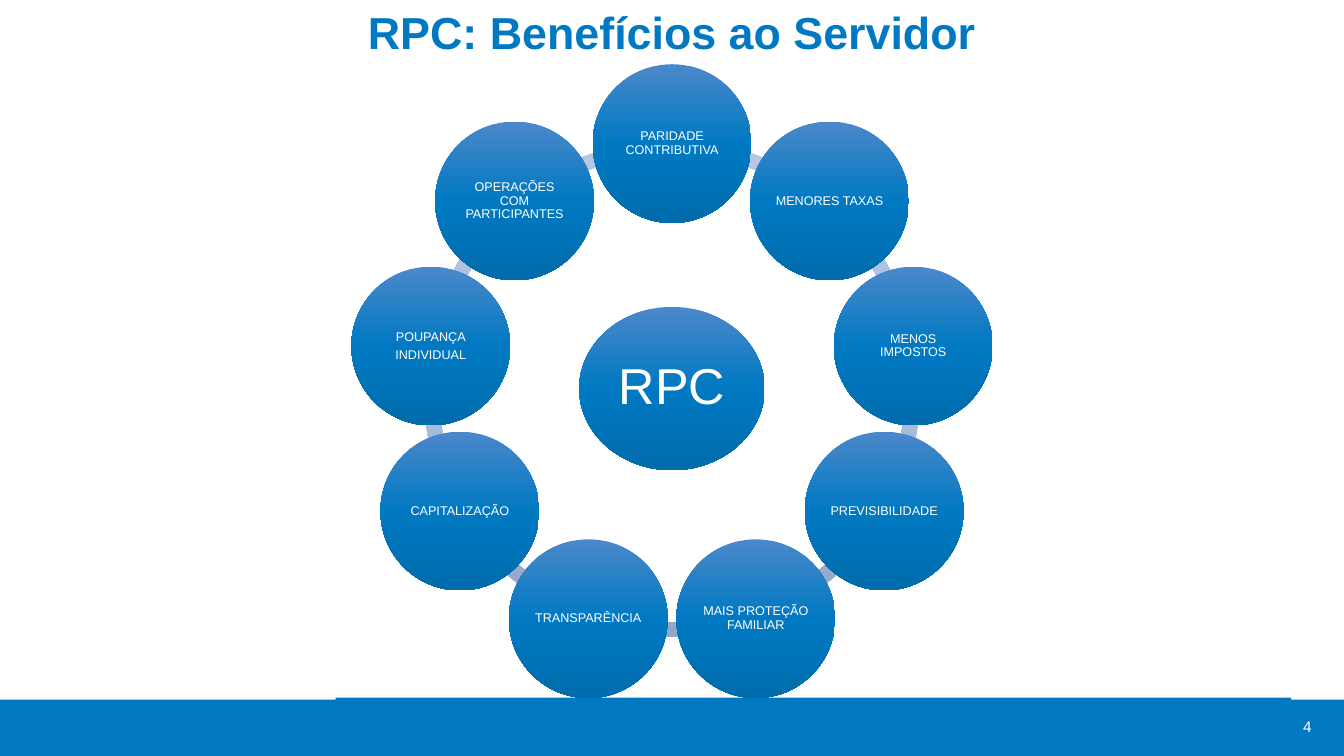
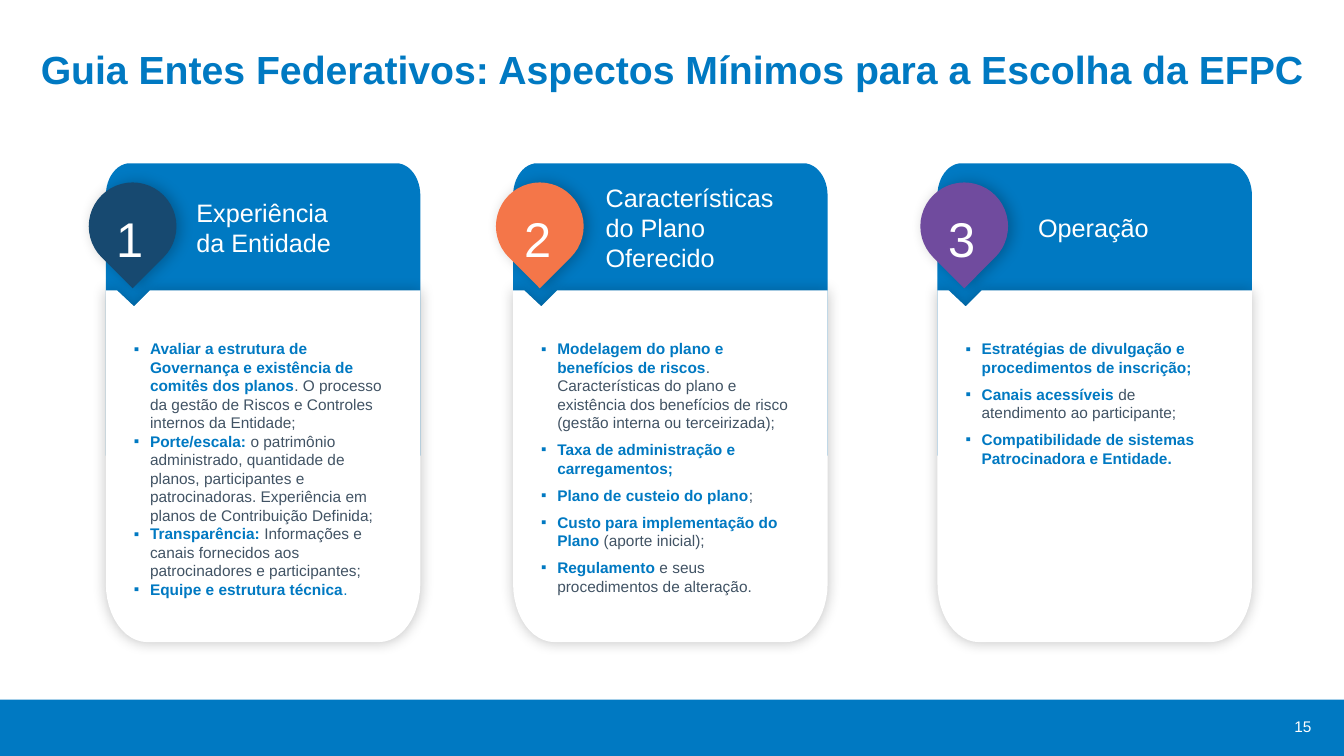
import copy
import math

import pptx
import pptx.dml.color
import pptx.enum.shapes
import pptx.enum.text
import pptx.oxml.ns
import pptx.util
from lxml import etree

RGBColor = pptx.dml.color.RGBColor
Shape = pptx.enum.shapes.MSO_SHAPE
Align = pptx.enum.text.PP_ALIGN
Anchor = pptx.enum.text.MSO_ANCHOR
qn = pptx.oxml.ns.qn

BLUE = RGBColor(0x00, 0x79, 0xC2)
WHITE = RGBColor(0xFF, 0xFF, 0xFF)
SLATE = RGBColor(0x41, 0x53, 0x64)
NAVY = RGBColor(0x17, 0x49, 0x70)
ORANGE = RGBColor(0xF4, 0x76, 0x49)
PURPLE = RGBColor(0x70, 0x4B, 0x9E)
CIRCLE_GRADIENT = (RGBColor(0x4B, 0x88, 0xCA), BLUE, RGBColor(0x00, 0x6C, 0xAC))
LINK_GRADIENT = (RGBColor(0xB6, 0xC6, 0xE2), RGBColor(0xA9, 0xBD, 0xE0),
                 RGBColor(0x93, 0xA7, 0xCA))

FONT = "Arial"
CELL = pptx.util.Inches(0.1)
COLUMNS, ROWS = 133.33, 75
BAND_TOP = 69.4
TITLE_FORMAT = {"alignment": Align.CENTER, "line_spacing": 0.9}
CIRCLE_FORMAT = {"alignment": Align.CENTER, "line_spacing": 0.9}

BENEFITS = (
    "PARIDADE CONTRIBUTIVA",
    "MENORES TAXAS",
    "MENOS IMPOSTOS",
    "PREVISIBILIDADE",
    "MAIS PROTEÇÃO FAMILIAR",
    "TRANSPARÊNCIA",
    "CAPITALIZAÇÃO",
    "POUPANÇA\nINDIVIDUAL",
    "OPERAÇÕES COM PARTICIPANTES",
)

# Each item holds its bold part, its plain part and, if not slate, the plain colour.
CARDS = (
    {"left": 10.5, "color": NAVY, "heading": "Experiência da Entidade",
     "heading_offset": 8, "heading_width": 17.9, "gap": 0,
     "items": (
         ("Avaliar a estrutura de Governança e existência de comitês dos planos",
          ". O processo da gestão de Riscos e Controles internos da Entidade;"),
         ("Porte/escala: ",
          "o patrimônio administrado, quantidade de planos, participantes e "
          "patrocinadoras. Experiência em planos de Contribuição Definida;"),
         ("Transparência: ",
          "Informações e canais fornecidos aos patrocinadores e participantes;"),
         ("Equipe e estrutura técnica", ".", BLUE),
     )},
    {"left": 50.9, "color": ORANGE, "heading": "Características\ndo Plano Oferecido",
     "heading_offset": 8.2, "heading_width": 21.7, "gap": 6,
     "items": (
         ("Modelagem do plano e benefícios de riscos",
          ". Características do plano e existência dos benefícios de risco "
          "(gestão interna ou terceirizada);"),
         ("Taxa de administração e carregamentos;",),
         ("Plano de custeio do plano", ";"),
         ("Custo para implementação do Plano ", "(aporte inicial);"),
         ("Regulamento", " e seus procedimentos de alteração."),
     )},
    {"left": 93, "color": PURPLE, "heading": "Operação",
     "heading_offset": 9, "heading_width": 15, "gap": 6,
     "items": (
         ("Estratégias de divulgação e procedimentos de inscrição;",),
         ("Canais acessíveis ", "de atendimento ao participante;"),
         ("Compatibilidade de sistemas Patrocinadora e Entidade.",),
     )},
)


def grid(*cells):
    """Turn counts of grid columns or rows into lengths."""
    return [round(cell * CELL) for cell in cells]


def set_values(target, values):
    for name, value in values.items():
        setattr(target, name, value)


def format_font(font, size, color, bold=False):
    set_values(font, {"name": FONT, "size": pptx.util.Pt(size), "bold": bold})
    font.color.rgb = color


def write(frame, text, size, color, bold=False, paragraph_format=None):
    """Fill a text frame, one paragraph for each line of text."""
    frame.text = text
    for paragraph in frame.paragraphs:
        set_values(paragraph, paragraph_format or {})
        for run in paragraph.runs:
            format_font(run.font, size, color, bold)


def add_text_box(slide, box, anchor=Anchor.TOP, wrap=True):
    frame = slide.shapes.add_textbox(*grid(*box)).text_frame
    set_values(frame, {"word_wrap": wrap, "vertical_anchor": anchor})
    return frame


def finish(shape, color=None):
    """Remove the default outline and shadow; give a plain fill if there is one."""
    shape.line.fill.background()
    shape.shadow.inherit = False
    if color is not None:
        shape.fill.solid()
        shape.fill.fore_color.rgb = color
    return shape


def add_shape(slide, kind, box, color=None):
    return finish(slide.shapes.add_shape(kind, *grid(*box)), color)


def add_outline(slide, points, color):
    corners = [grid(*point) for point in points]
    builder = slide.shapes.build_freeform(*corners[0], scale=1.0)
    builder.add_line_segments(corners[1:], close=True)
    return finish(builder.convert_to_shape(), color)


def fill_gradient(shape, colors):
    """Fill from top to bottom with three evenly spaced colours."""
    shape.fill.gradient()
    shape.fill.gradient_angle = 270
    stop_list = shape._element.spPr.find(".//" + qn("a:gsLst"))
    stop_list.append(copy.deepcopy(stop_list[0]))
    for index, (stop, color) in enumerate(zip(shape.fill.gradient_stops, colors)):
        stop.color.rgb = color
        stop.position = index / 2


def cast_shadow(shape, distance=0):
    effects = shape._element.spPr.find(qn("a:effectLst"))
    shadow = etree.SubElement(
        effects, qn("a:outerShdw"), blurRad=str(pptx.util.Pt(10)),
        dist=str(pptx.util.Pt(distance)), dir="0", algn="ctr", rotWithShape="0")
    color = etree.SubElement(shadow, qn("a:srgbClr"), val="000000")
    etree.SubElement(color, qn("a:alpha"), val="23000")


def corner(center_x, center_y, radius_x, radius_y, start):
    """Points of a clockwise quarter ellipse from the start angle in degrees."""
    angles = [math.radians(start + 7.5 * step) for step in range(13)]
    return [(center_x + radius_x * math.cos(angle), center_y + radius_y * math.sin(angle))
            for angle in angles]


def add_layout_band(slide):
    """Put the bottom band on the layout that the slides share."""
    band = add_shape(slide, Shape.RECTANGLE, (0, BAND_TOP, COLUMNS, ROWS - BAND_TOP), BLUE)
    band._element.nvSpPr.cNvPr.set("id", "99")
    slide.slide_layout.shapes._spTree.insert(2, band._element)


def add_title(slide, text, top, height, size):
    title = slide.shapes.title
    left, top, width, height = grid(0, top, COLUMNS, height)
    set_values(title, {"left": left, "top": top, "width": width, "height": height})
    set_values(title.text_frame, {"vertical_anchor": Anchor.TOP, "word_wrap": True,
                                  "auto_size": pptx.enum.text.MSO_AUTO_SIZE.NONE})
    write(title.text_frame, text, size, BLUE, True, TITLE_FORMAT)


def add_page_number(slide, number):
    frame = add_text_box(slide, (116.7, 70.3, 14.4, 3.6), Anchor.MIDDLE)
    write(frame, str(number), 11, WHITE, paragraph_format={"alignment": Align.RIGHT})


def add_circle(slide, center, width, height, text, size, inset):
    box = (center[0] - width / 2, center[1] - height / 2, width, height)
    circle = add_shape(slide, Shape.OVAL, box)
    fill_gradient(circle, CIRCLE_GRADIENT)
    frame = circle.text_frame
    margins = ("margin_left", "margin_top", "margin_right", "margin_bottom")
    set_values(frame, dict.fromkeys(margins, pptx.util.Inches(inset)))
    set_values(frame, {"word_wrap": True, "vertical_anchor": Anchor.MIDDLE})
    spacing = {"space_after": pptx.util.Pt(0.35 * size)}
    write(frame, text, size, WHITE, paragraph_format=CIRCLE_FORMAT | spacing)


def add_benefit_ring(slide):
    center_x, center_y = center = (COLUMNS / 2, 38.55)
    link_size, orbit, diameter = 49.3, 24.3, 15.75
    step = 360 / len(BENEFITS)
    angles = [270 + step * index for index in range(len(BENEFITS))]
    for angle in angles:
        link = add_shape(slide, Shape.BLOCK_ARC,
                         (center_x - link_size / 2, center_y - link_size / 2,
                          link_size, link_size))
        # Angle adjustments count 60000 to a degree, over a base of 100000.
        link.adjustments[0] = angle % 360 * 0.6
        link.adjustments[1] = (angle + step) % 360 * 0.6
        link.adjustments[2] = 0.03
        fill_gradient(link, LINK_GRADIENT)
    add_circle(slide, center, 18.4, 16.2, "RPC", 36, 0.05)
    for angle, benefit in zip(angles, BENEFITS):
        position = (center_x + orbit * math.cos(math.radians(angle)),
                    center_y + orbit * math.sin(math.radians(angle)))
        add_circle(slide, position, diameter, diameter, benefit, 9, 0.01)


def add_bullet(paragraph, strong, plain="", plain_color=SLATE):
    properties = paragraph._p.get_or_add_pPr()
    indent = pptx.util.Inches(0.16)
    properties.set("marL", str(indent))
    properties.set("indent", str(-indent))
    etree.SubElement(properties, qn("a:buFont"), typeface=FONT)
    etree.SubElement(properties, qn("a:buChar"), char="▪")
    for text, color, bold in ((strong, BLUE, True), (plain, plain_color, False)):
        if text:
            run = paragraph.add_run()
            run.text = text
            format_font(run.font, 11, color, bold)


def add_list(slide, box, items, gap):
    frame = add_text_box(slide, box)
    for index, item in enumerate(items):
        paragraph = frame.add_paragraph() if index else frame.paragraphs[0]
        if index and gap:
            paragraph.space_before = pptx.util.Pt(gap)
        add_bullet(paragraph, *item)


def add_card(slide, number, card):
    left, width = card["left"], 31.2
    right = left + width
    top, fold, header_bottom, bottom = 16.2, 28.8, 45.2, 63.7

    add_outline(slide, [
        *corner(left + 2.4, top + 3.2, 2.4, 3.2, 180),
        *corner(right - 2.4, top + 3.2, 2.4, 3.2, 270),
        (right, header_bottom), (left, header_bottom)], BLUE)
    heading = add_text_box(
        slide, (left + card["heading_offset"], 17.5, card["heading_width"], 10.1),
        Anchor.MIDDLE)
    write(heading, card["heading"], 18, WHITE)

    drop = add_shape(slide, Shape.TEAR, (left - 1.7, 18.1, 8.7, 8.7), card["color"])
    drop.rotation = 135
    cast_shadow(drop, 3)
    label = add_text_box(slide, (left + 0.1, 17, 4.9, 7.7), Anchor.MIDDLE, wrap=False)
    write(label, str(number), 60, WHITE)
    label.paragraphs[0].runs[0].font._element.set("baseline", "-25000")

    panel = add_outline(slide, [
        (left, fold), (left + 1.1, fold), (left + 2.8, fold + 1.6),
        (left + 4.4, fold), (right, fold),
        *corner(right - 4.1, bottom - 5.8, 4.1, 5.8, 0),
        *corner(left + 4.1, bottom - 5.8, 4.1, 5.8, 90)], WHITE)
    cast_shadow(panel)
    add_list(slide, (left + 1.8, 33.2, 27.5, 29), card["items"], card["gap"])


def main():
    presentation = pptx.Presentation()
    presentation.slide_width, presentation.slide_height = grid(COLUMNS, ROWS)
    layout = presentation.slide_layouts.get_by_name("Title Only")

    slide = presentation.slides.add_slide(layout)
    add_layout_band(slide)
    add_shape(slide, Shape.RECTANGLE, (33.3, 69.2, 94.8, 5.8), BLUE)
    add_title(slide, "RPC: Benefícios ao Servidor", 0.6, 7, 32)
    add_page_number(slide, 4)
    add_benefit_ring(slide)

    slide = presentation.slides.add_slide(layout)
    add_title(slide, "Guia Entes Federativos: Aspectos Mínimos para a Escolha da EFPC",
              4.5, 8.1, 28)
    add_page_number(slide, 15)
    for number, card in enumerate(CARDS, start=1):
        add_card(slide, number, card)

    presentation.save("out.pptx")


if __name__ == "__main__":
    main()
